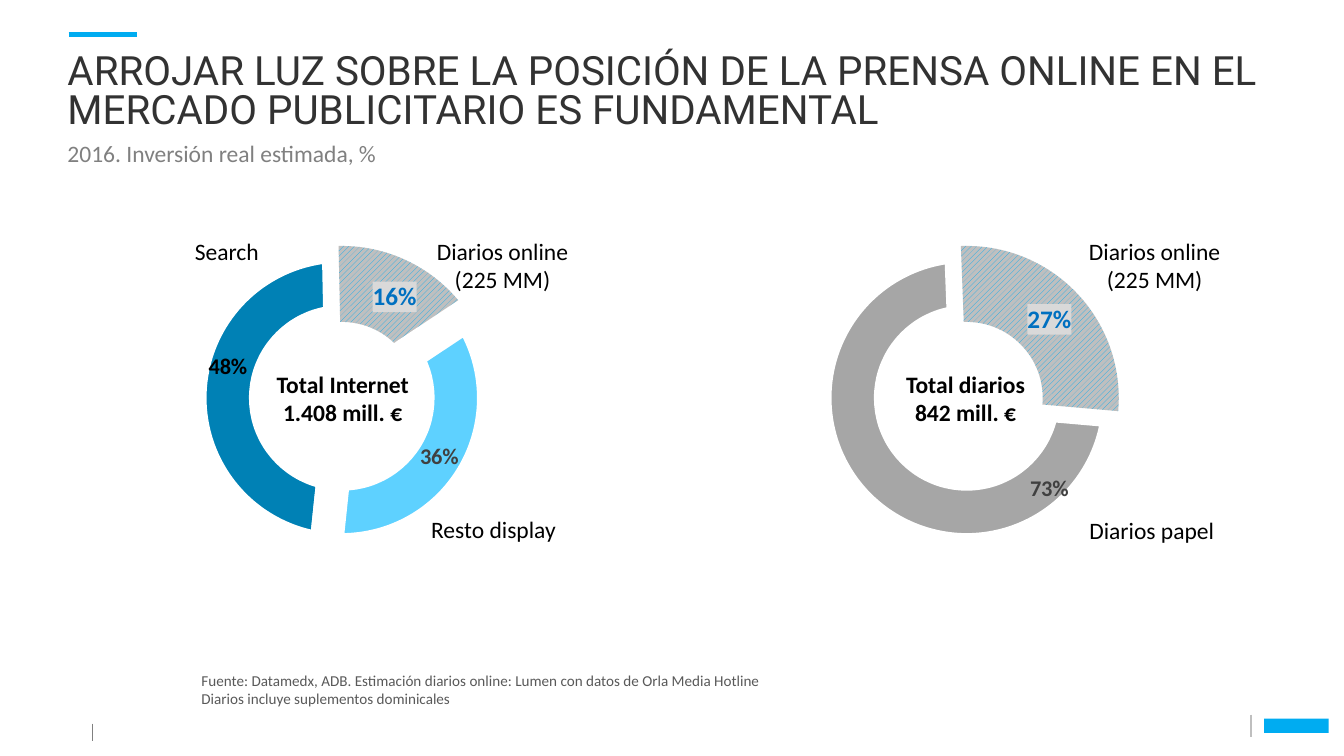
"""Build a slide with two doughnut charts on online press ad spend."""
from lxml import etree
from pptx import Presentation
from pptx.chart.data import CategoryChartData
from pptx.dml.color import RGBColor
from pptx.enum.chart import XL_CHART_TYPE
from pptx.enum.dml import MSO_PATTERN
from pptx.enum.shapes import MSO_CONNECTOR, MSO_SHAPE
from pptx.enum.text import MSO_ANCHOR, PP_ALIGN
from pptx.oxml import parse_xml
from pptx.oxml.ns import nsdecls, qn
from pptx.util import Inches, Pt

RING = XL_CHART_TYPE.DOUGHNUT
HATCH = MSO_PATTERN.WIDE_UPWARD_DIAGONAL
LINE, RECT = MSO_CONNECTOR.STRAIGHT, MSO_SHAPE.RECTANGLE
LEFT, MID, TOP = PP_ALIGN.LEFT, PP_ALIGN.CENTER, MSO_ANCHOR.TOP

HEX = {"sky": "00ACF1", "deep": "0081B5", "light": "5ED1FF", "gray": "A6A6A6",
       "silver": "BFBFBF", "pale": "D9D9D9", "white": "FFFFFF", "black": "000000",
       "ink": "323232", "dark": "404040", "note": "595959", "mid": "808080",
       "blue": "0070C0"}

TITLE = ("ARROJAR LUZ SOBRE LA POSICIÓN DE LA PRENSA ONLINE "
         "EN EL MERCADO PUBLICITARIO ES FUNDAMENTAL")
ONLINE = ["Diarios online", "(225 MM)"]
SOURCE = ["Fuente: Datamedx, ADB. Estimación diarios online: "
          "Lumen con datos de Orla Media Hotline",
          "Diarios incluye suplementos dominicales"]

STYLES = {
    "title": dict(size=28.8, name="Roboto", color="ink", align=LEFT, wrap=True,
                  space=0.8, inset=0),
    "sub": dict(size=16.8, color="mid", align=LEFT),
    "label": dict(size=16.8, color="black", align=MID),
    "total": dict(size=16.8, color="black", align=MID, bold=True),
    "note": dict(size=10.8, color="note", align=LEFT, wrap=True),
}

# Boxes are left, top, width, height as percent of the slide.
TEXTS = [
    ("title", (5.02, 7.2, 93.22, 13.47), [TITLE]),
    ("sub", (4.28, 17.73, 24.67, 5.07), ["2016. Inversión real estimada, %"]),
    ("label", (13.5, 30.67, 6.75, 5.07), ["Search"]),
    ("label", (31.43, 30.67, 11.92, 8.93), ONLINE),
    ("label", (31.05, 67.47, 11.32, 5.07), ["Resto display"]),
    ("total", (19.72, 48.27, 11.55, 8.93), ["Total Internet", "1.408 mill. €"]),
    ("label", (79.95, 30.67, 11.92, 8.93), ONLINE),
    ("label", (79.95, 67.6, 11.48, 5.07), ["Diarios papel"]),
    ("total", (66.52, 48.27, 10.65, 8.93), ["Total diarios", "842 mill. €"]),
    ("note", (14.25, 88.13, 53.32, 6.13), SOURCE),
]

# Slices are value, fill, label colour, label shift.
RINGS = [
    (8.62, 186, 0.17, [(0.48, "deep", "black", (0, -0.06)),
                       (0.16, "hatch", "blue", None),
                       (0.36, "light", "dark", None)]),
    (55.12, 95, 0.17, [(0.73, "gray", "dark", (0.38, 0.03)),
                       (0.27, "hatch", "blue", None)]),
]
RULES = [((5.1, 4.53, 10.2, 4.53), "sky", 3.5),
         ((6.9, 95.73, 6.9, 98), "mid", 0.5),
         ((93.08, 94.53, 93.08, 97.47), "silver", 1)]
MARK = (94.05, 95.07, 4.8, 1.87)

deck = Presentation()
deck.slide_width, deck.slide_height = Inches(13.33), Inches(7.5)
slide = deck.slides.add_slide(deck.slide_layouts[6])


def hue(key):
    return RGBColor.from_string(HEX[key])


def place(box):
    sides = (deck.slide_width, deck.slide_height) * 2
    return [int(part * side / 100) for part, side in zip(box, sides)]


def style(font, **look):
    font.color.rgb = hue(look.pop("color"))
    for key, val in look.items():
        setattr(font, key, val)


def write(kind, box, lines):
    look = STYLES[kind]
    frame = slide.shapes.add_textbox(*place(box)).text_frame
    frame.word_wrap = look.get("wrap", False)
    frame.vertical_anchor = TOP
    if "inset" in look:
        for side in ("left", "top", "right", "bottom"):
            setattr(frame, "margin_" + side, look["inset"])
    for num, line in enumerate(lines):
        para = frame.add_paragraph() if num else frame.paragraphs[0]
        para.alignment = look["align"]
        para.line_spacing = look.get("space")
        run = para.add_run()
        run.text = line
        style(run.font, size=Pt(look["size"]), color=look["color"],
              name=look.get("name", "Calibri"), bold=look.get("bold", False))


def layout(**vals):
    tags = "".join(f'<c:{key} val="{val}"/>' for key, val in vals.items())
    return parse_xml(f'<c:layout {nsdecls("c")}><c:manualLayout>{tags}'
                     '</c:manualLayout></c:layout>')


def tune(label, shift, hatch):
    parts = [parse_xml(f'<c:numFmt {nsdecls("c")} formatCode="0%" sourceLinked="0"/>')]
    if shift:
        parts.insert(0, layout(x=shift[0], y=shift[1]))
    if hatch:
        parts.append(parse_xml(
            f'<c:spPr {nsdecls("c", "a")}><a:solidFill><a:srgbClr val="{HEX["pale"]}"/>'
            '</a:solidFill></c:spPr>'))
    for old in label.findall(qn("c:spPr")):
        label.remove(old)
    for spot, part in enumerate(parts, 1):
        label.insert(spot, part)


def ring(left, start, inset, slices):
    data = CategoryChartData(number_format="0%")
    data.categories = [str(num + 1) for num in range(len(slices))]
    data.add_series("Series 1", [part[0] for part in slices])
    box = place((left, 24.27, 32.33, 56.93))
    chart = slide.shapes.add_chart(RING, *box, data).chart
    chart.has_legend = chart.has_title = False
    style(chart.font, size=Pt(14), name="Calibri", color="black")
    plot = chart.plots[0]
    plot.vary_by_categories = False
    plot.has_data_labels = True
    plot.data_labels.show_value = True
    plot.data_labels.show_percentage = False
    for num, (_, fill, tone, shift) in enumerate(slices):
        point = plot.series[0].points[num]
        paint, edge, hatch = point.format.fill, point.format.line, fill == "hatch"
        if hatch:
            paint.patterned()
            paint.pattern = HATCH
            paint.fore_color.rgb, paint.back_color.rgb = hue("sky"), hue("silver")
            edge.fill.background()
        else:
            paint.solid()
            paint.fore_color.rgb = hue(fill)
            edge.color.rgb, edge.width = hue("white"), Pt(24)
        style(point.data_label.font, size=Pt(18 if hatch else 16),
              name="Calibri", bold=True, color=tone)
    root = chart.element
    for label, part in zip(root.xpath(".//c:dLbl"), slices):
        tune(label, part[3], part[1] == "hatch")
    for tag, val in (("firstSliceAng", start), ("holeSize", 60)):
        root.xpath(f".//c:{tag}")[0].set("val", str(val))
    area = root.xpath(".//c:plotArea")[0]
    for old in area.findall(qn("c:layout")):
        area.remove(old)
    area.insert(0, layout(layoutTarget="inner", xMode="edge", yMode="edge",
                          x=inset, y=0.145, w=0.7, h=0.707))


for ends, tone, width in RULES:
    rule = slide.shapes.add_connector(LINE, *place(ends))
    rule.line.color.rgb, rule.line.width = hue(tone), Pt(width)
    etree.SubElement(rule.element.spPr, qn("a:effectLst"))

mark = slide.shapes.add_shape(RECT, *place(MARK))
mark.shadow.inherit = False
mark.fill.solid()
mark.fill.fore_color.rgb = hue("sky")
mark.line.fill.background()

for item in RINGS:
    ring(*item)
for item in TEXTS:
    write(*item)

deck.save("out.pptx")
